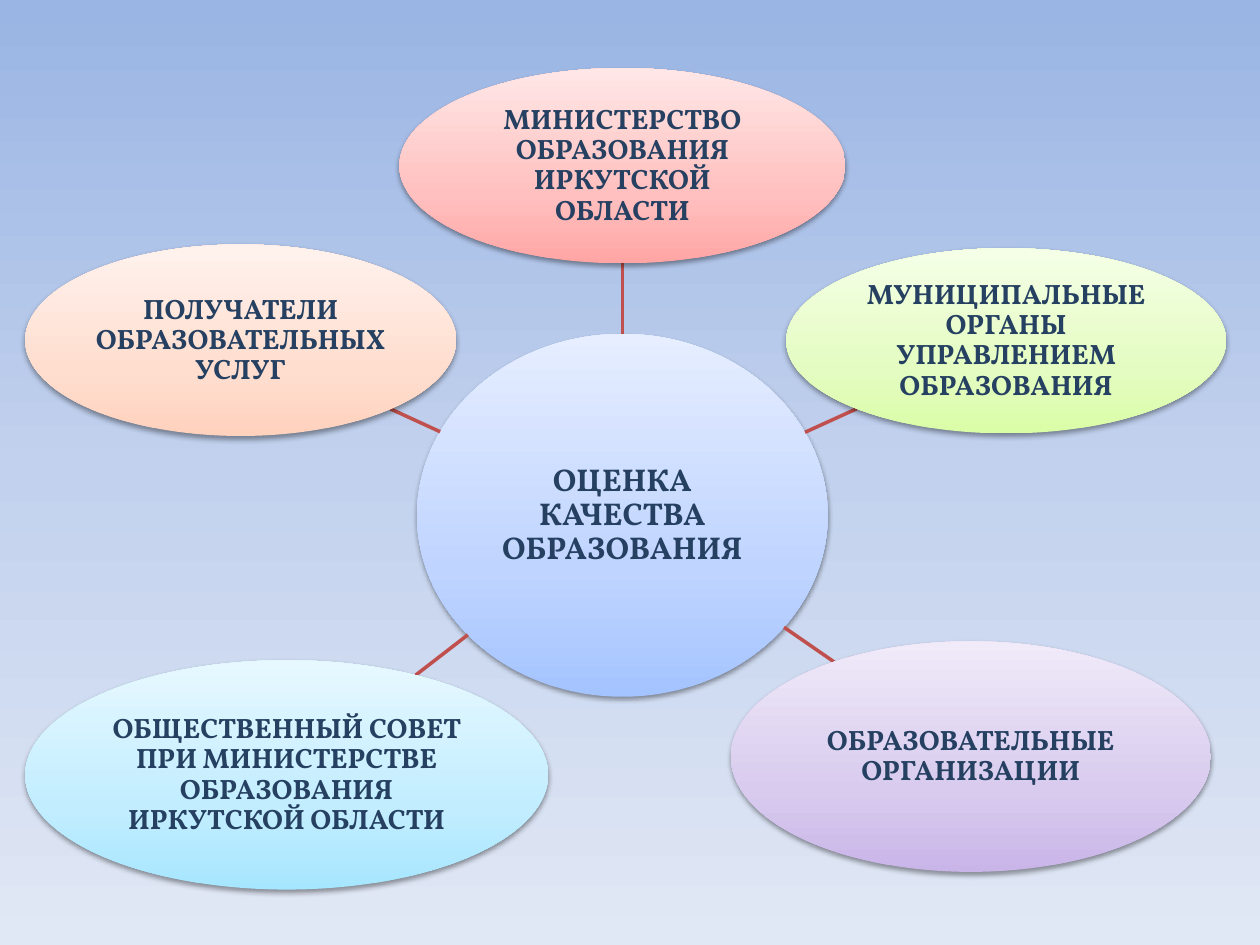
from math import hypot

from lxml.etree import SubElement
from pptx import Presentation
from pptx.dml.color import RGBColor
from pptx.enum.shapes import MSO_CONNECTOR, MSO_SHAPE
from pptx.enum.text import MSO_ANCHOR, PP_ALIGN
from pptx.oxml.ns import qn
from pptx.util import Inches, Pt

THEME = {
    "font": "Vollkorn", "text": "254061", "line": "C0504D",
    "hub_size": 18, "size": 16, "line_width": 2,
    "background": [(0, "9AB5E4"), (50, "C2D1ED"), (100, "E1E8F5")],
    "shadow": {"blurRad": Pt(3.1), "dist": Pt(1.6), "dir": 90 * 60000,
               "algn": "ctr", "rotWithShape": 0},
    "shadow_opacity": 38,
}

# text, (left, top, width, height), colours from bottom to top
HUB = ("ОЦЕНКА КАЧЕСТВА ОБРАЗОВАНИЯ", (3.31, 2.65, 3.26, 2.88),
       ("A4C4FF", "BFD4FF", "E6EEFF"))
PARTIES = [
    ("МИНИСТЕРСТВО ОБРАЗОВАНИЯ ИРКУТСКОЙ ОБЛАСТИ", (3.17, 0.54, 3.54, 1.55),
     ("FFA6A5", "FFC0BF", "FFE7E7")),
    ("МУНИЦИПАЛЬНЫЕ ОРГАНЫ УПРАВЛЕНИЕМ ОБРАЗОВАНИЯ", (6.24, 1.97, 3.49, 1.47),
     ("DAFDA7", "E4FCC2", "F5FFE7")),
    ("ОБРАЗОВАТЕЛЬНЫЕ ОРГАНИЗАЦИИ", (5.8, 5.09, 3.81, 1.83),
     ("C9B5E8", "D8CBEE", "F0EAF9")),
    ("ОБЩЕСТВЕННЫЙ СОВЕТ ПРИ МИНИСТЕРСТВЕ ОБРАЗОВАНИЯ ИРКУТСКОЙ ОБЛАСТИ",
     (0.2, 5.24, 4.15, 1.82), ("A7E6FF", "C1EDFF", "E7F8FF")),
    ("ПОЛУЧАТЕЛИ ОБРАЗОВАТЕЛЬНЫХ УСЛУГ", (0.2, 1.94, 3.42, 1.52),
     ("FFD2BD", "FFDED0", "FFF2ED")),
]


def set_gradient(fill, owner, stops, angle):
    """Give fill, held by the XML element owner, any number of stops."""
    fill.gradient()
    fill.gradient_angle = angle
    stop_list = next(owner.iter(qn("a:gsLst")))
    for old in list(stop_list):
        stop_list.remove(old)
    for position, colour in stops:
        stop = SubElement(stop_list, qn("a:gs"), pos=str(position * 1000))
        SubElement(stop, qn("a:srgbClr"), val=colour)


def add_shadow(sp):
    effects = SubElement(sp._element.spPr, qn("a:effectLst"))
    shadow = SubElement(effects, qn("a:outerShdw"),
                        {k: str(v) for k, v in THEME["shadow"].items()})
    black = SubElement(shadow, qn("a:srgbClr"), val="000000")
    SubElement(black, qn("a:alpha"), val=str(THEME["shadow_opacity"] * 1000))


def add_ellipse(s, text, box, colours, size):
    sp = s.shapes.add_shape(MSO_SHAPE.OVAL, *map(Inches, box))
    set_gradient(sp.fill, sp._element, zip((0, 35, 100), colours), 90)
    sp.line.fill.background()
    add_shadow(sp)
    tf = sp.text_frame
    frame = {"word_wrap": True, "vertical_anchor": MSO_ANCHOR.MIDDLE}
    for side in ("left", "top", "right", "bottom"):
        frame["margin_" + side] = Inches(0.01)
    for name, value in frame.items():
        setattr(tf, name, value)
    p = tf.paragraphs[0]
    p.alignment, p.line_spacing = PP_ALIGN.CENTER, 0.9
    r = p.add_run()
    r.text = text
    for name, value in {"name": THEME["font"], "size": Pt(size), "bold": True}.items():
        setattr(r.font, name, value)
    r.font.color.rgb = RGBColor.from_string(THEME["text"])


def center(box):
    left, top, width, height = box
    return left + width / 2, top + height / 2


def edge_point(box, target):
    """Point where the ellipse in box is crossed on the way to target."""
    x, y = center(box)
    dx, dy = target[0] - x, target[1] - y
    t = 1 / hypot(dx / (box[2] / 2), dy / (box[3] / 2))
    return x + t * dx, y + t * dy


def add_spoke(s, start_box, end_box):
    start = edge_point(start_box, center(end_box))
    end = edge_point(end_box, center(start_box))
    line = s.shapes.add_connector(MSO_CONNECTOR.STRAIGHT, *map(Inches, start + end))
    line.line.color.rgb = RGBColor.from_string(THEME["line"])
    line.line.width = Pt(THEME["line_width"])
    SubElement(line._element.spPr, qn("a:effectLst"))


def main():
    prs = Presentation()
    prs.slide_width, prs.slide_height = Inches(10), Inches(7.5)
    s = prs.slides.add_slide(prs.slide_layouts[6])
    set_gradient(s.background.fill, s._element, THEME["background"], 270)
    add_ellipse(s, *HUB, THEME["hub_size"])
    for text, box, colours in PARTIES:
        add_spoke(s, HUB[1], box)
        add_ellipse(s, text, box, colours, THEME["size"])
    prs.save("out.pptx")


if __name__ == "__main__":
    main()
